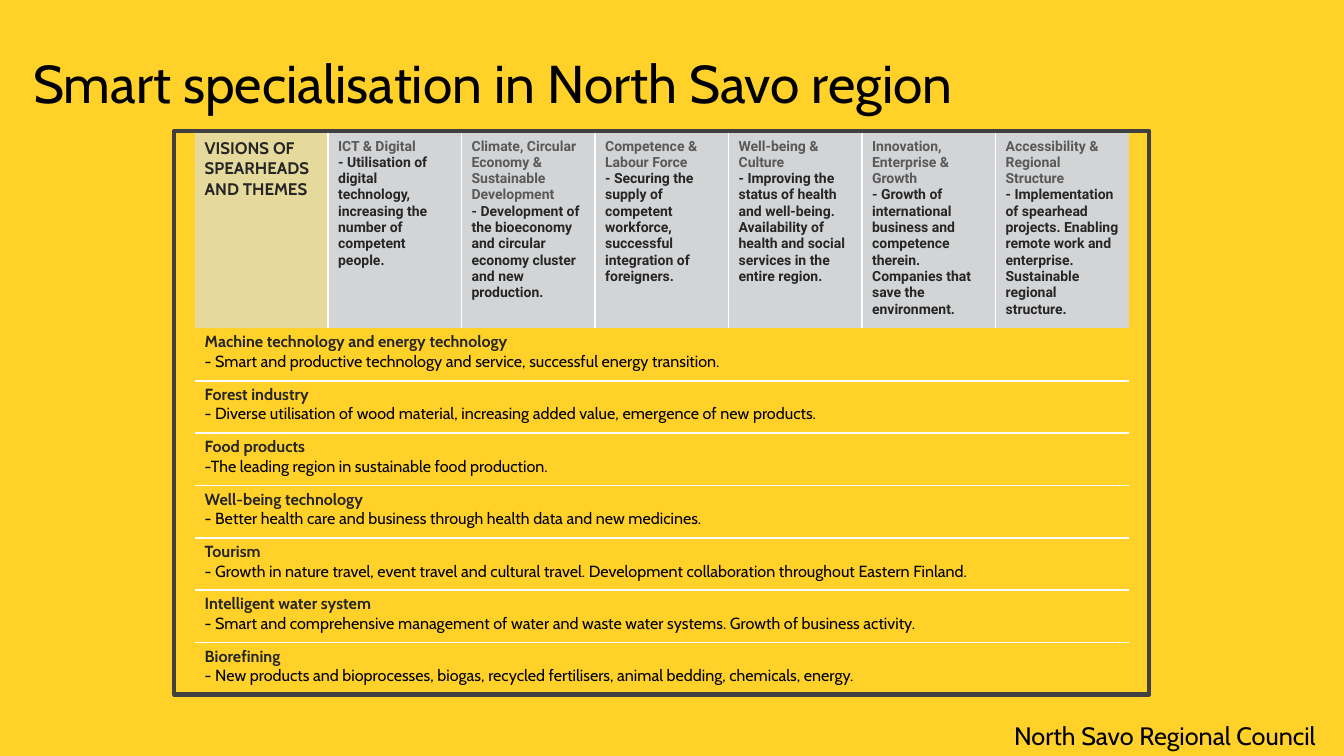
from lxml import etree
from pptx import Presentation
from pptx.dml.color import RGBColor
from pptx.enum.shapes import MSO_SHAPE
from pptx.enum.text import MSO_ANCHOR
from pptx.oxml.ns import qn
from pptx.util import Inches, Pt

RECTANGLE = MSO_SHAPE.RECTANGLE
TOP, MIDDLE = MSO_ANCHOR.TOP, MSO_ANCHOR.MIDDLE
PLAIN_TABLE_STYLE = "{2D5ABB26-0587-4C30-8999-92F81FD0307C}"

COLORS = {
    "background": "FFD129",
    "text": "000000",
    "heading": "262626",
    "theme": "595959",
    "frame": "404040",
    "corner": "E5DA9C",
    "theme_fill": "D3D4D6",
    "rule": "FFFFFF",
}

THEMES = [
    ("ICT & Digital",
     "- Utilisation of digital technology, increasing the number of competent people."),
    ("Climate, Circular Economy & Sustainable Development",
     "- Development of the bioeconomy and circular economy cluster and new production."),
    ("Competence & Labour Force",
     "- Securing the supply of competent workforce, successful integration of foreigners."),
    ("Well-being & Culture",
     "- Improving the status of health and well-being. Availability of health and "
     "social services in the entire region."),
    ("Innovation, Enterprise & Growth",
     "- Growth of international business and competence therein. Companies that save "
     "the environment."),
    ("Accessibility & Regional Structure",
     "- Implementation of spearhead projects. Enabling remote work and enterprise. "
     "Sustainable regional structure."),
]

SPEARHEADS = [
    ("Machine technology and energy technology",
     "- Smart and productive technology and service, successful energy transition."),
    ("Forest industry",
     "- Diverse utilisation of wood material, increasing added value, emergence of new products."),
    ("Food products",
     "-The leading region in sustainable food production."),
    ("Well-being technology",
     "- Better health care and business through health data and new medicines."),
    ("Tourism",
     "- Growth in nature travel, event travel and cultural travel. Development "
     "collaboration throughout Eastern Finland."),
    ("Intelligent water system",
     "- Smart and comprehensive management of water and waste water systems. "
     "Growth of business activity."),
    ("Biorefining",
     "- New products and bioprocesses, biogas, recycled fertilisers, animal bedding, "
     "chemicals, energy."),
]


def rgb(name):
    return RGBColor.from_string(COLORS[name])


class SlideBuilder:
    def __init__(self, slide):
        self.slide = slide
        fill = slide.background.fill
        fill.solid()
        fill.fore_color.rgb = rgb("background")

    def add_lines(self, tf, lines, size, font="Cabin"):
        """Add one paragraph per (text, colour, bold) line."""
        for i, (text, color, bold) in enumerate(lines):
            p = tf.paragraphs[0] if i == 0 else tf.add_paragraph()
            r = p.add_run()
            r.text = text
            r.font.name, r.font.size, r.font.bold = font, Pt(size), bold
            r.font.color.rgb = rgb(color)

    def text(self, left, top, width, height, text, size, anchor=TOP, spacing=None):
        box = self.slide.shapes.add_textbox(
            Inches(left), Inches(top), Inches(width), Inches(height))
        tf = box.text_frame
        tf.word_wrap = True
        tf.vertical_anchor = anchor
        self.add_lines(tf, [(text, "text", False)], size)
        tf.paragraphs[0].line_spacing = spacing

    def frame(self, left, top, width, height):
        sp = self.slide.shapes.add_shape(
            RECTANGLE, Inches(left), Inches(top), Inches(width), Inches(height))
        sp.shadow.inherit = False
        sp.fill.background()
        sp.line.color.rgb = rgb("frame")
        sp.line.width = Pt(3)

    def table(self, left, top, col_width, row_heights, cols):
        frame = self.slide.shapes.add_table(
            len(row_heights), cols, Inches(left), Inches(top),
            Inches(col_width * cols), Inches(sum(row_heights)))
        table = frame.table
        next(frame.element.iter(qn("a:tableStyleId"))).text = PLAIN_TABLE_STYLE
        for col in table.columns:
            col.width = Inches(col_width)
        for row, height in zip(table.rows, row_heights):
            row.height = Inches(height)
        return table

    def cell(self, cell, lines, size, font="Cabin", fill=None, margin=0.05):
        cell.margin_left = cell.margin_right = Inches(0.1)
        cell.margin_top = cell.margin_bottom = Inches(margin)
        if fill:
            cell.fill.solid()
            cell.fill.fore_color.rgb = rgb(fill)
        else:
            cell.fill.background()
        self.add_lines(cell.text_frame, lines, size, font)

    def borders(self, cell, sides):
        """Rule the given sides, a string of letters in the order L, R, T, B."""
        tc_pr = cell._tc.get_or_add_tcPr()
        for i, side in enumerate(sides):
            ln = etree.Element(qn("a:ln" + side), w=str(Pt(1.5)))
            fill = etree.SubElement(ln, qn("a:solidFill"))
            etree.SubElement(fill, qn("a:srgbClr"), val=COLORS["rule"])
            tc_pr.insert(i, ln)


def main():
    prs = Presentation()
    prs.slide_width, prs.slide_height = Inches(13.33), Inches(7.5)
    s = SlideBuilder(prs.slides.add_slide(prs.slide_layouts[6]))

    s.text(0.23, 0.13, 12.68, 1.45, "Smart specialisation in North Savo region",
           38, MIDDLE, 0.9)
    s.frame(1.73, 1.3, 9.67, 5.59)

    last_col, last_row = len(THEMES), len(SPEARHEADS)
    table = s.table(1.93, 1.32, 9.27 / (last_col + 1), [1.89] + [0.52] * last_row,
                    last_col + 1)

    corner = table.cell(0, 0)
    s.cell(corner, [("VISIONS OF SPEARHEADS AND THEMES", "heading", True)], 12,
           fill="corner")
    s.borders(corner, "R")
    for col, (theme, vision) in enumerate(THEMES, 1):
        cell = table.cell(0, col)
        s.cell(cell, [(theme, "theme", True), (vision, "heading", True)], 10,
               "Roboto", "theme_fill")
        s.borders(cell, "L" if col == last_col else "LR")

    for row, (spearhead, vision) in enumerate(SPEARHEADS, 1):
        cell = table.cell(row, 0)
        cell.merge(table.cell(row, last_col))
        s.cell(cell, [(spearhead, "heading", True), (vision, "text", False)], 11.5,
               margin=0.04)
        sides = ("T" if row > 1 else "") + ("B" if row < last_row else "")
        for col in range(last_col + 1):
            s.borders(table.cell(row, col), sides)

    s.text(9.96, 7.1, 3.37, 0.4, "North Savo Regional Council", 18)
    prs.save("out.pptx")


if __name__ == "__main__":
    main()
